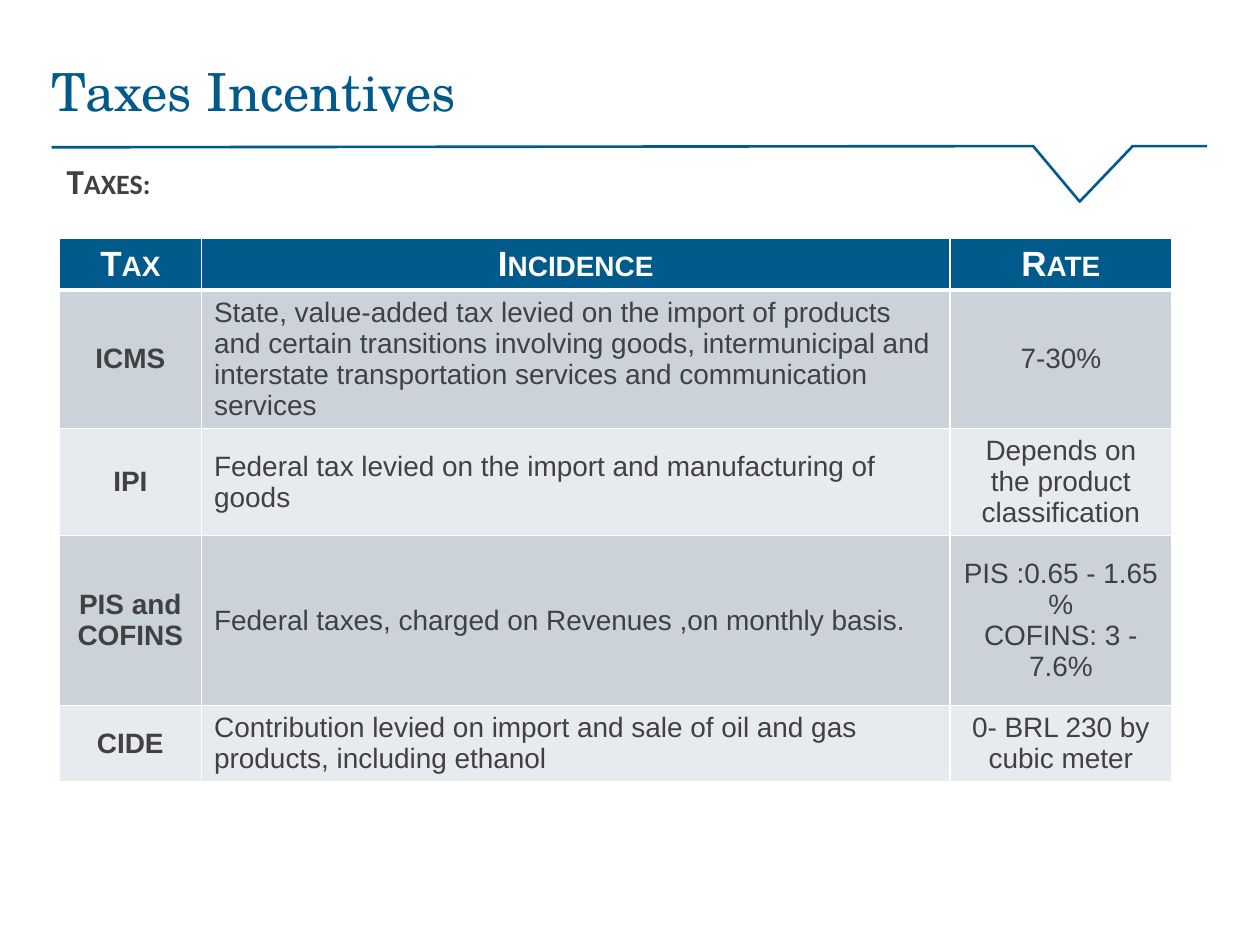
import pptx
import pptx.dml.color
import pptx.enum.text
import pptx.oxml
import pptx.oxml.ns
import pptx.util

Pt = pptx.util.Pt
ALIGN = pptx.enum.text.PP_ALIGN
ANCHOR = pptx.enum.text.MSO_ANCHOR

COLORS = {
    "blue": "005A8C",
    "text": "414042",
    "white": "FFFFFF",
    "band_dark": "CCD2DA",
    "band_light": "E7EAEE",
}

COL_WIDTHS = [81.4, 427.7, 126.7]
ROW_HEIGHTS = [27.4, 79.2, 61.2, 97.2, 43.2]
ROWS = [
    ["Tax", "Incidence", "Rate"],
    ["ICMS",
     "State, value-added tax levied on the import of products and certain "
     "transitions involving goods, intermunicipal and interstate "
     "transportation services and communication services",
     "7-30%"],
    ["IPI",
     "Federal tax levied on the import and manufacturing of goods",
     "Depends on the product classification"],
    ["PIS and COFINS",
     "Federal taxes, charged on Revenues ,on monthly basis.",
     "PIS :0.65 - 1.65 %\nCOFINS: 3 - 7.6%"],
    ["CIDE",
     "Contribution levied on import and sale of oil and gas products, "
     "including ethanol",
     "0- BRL 230 by cubic meter"],
]


def rgb(name):
    return pptx.dml.color.RGBColor.from_string(COLORS[name])


def add_run(p, text, size, font, color, bold=False, small_caps=False):
    r = p.add_run()
    r.text = text
    r.font.size = Pt(size)
    r.font.name = font
    r.font.bold = bold
    r.font.color.rgb = rgb(color)
    if small_caps:
        r._r.get_or_add_rPr().set("cap", "small")


def set_borders(cell, top, bottom):
    tc_pr = cell._tc.get_or_add_tcPr()
    for side, width in (("L", 1), ("R", 1), ("T", top), ("B", bottom)):
        tc_pr.append(pptx.oxml.parse_xml(
            f'<a:ln{side} {pptx.oxml.ns.nsdecls("a")} w="{Pt(width)}">'
            f'<a:solidFill><a:srgbClr val="{COLORS["white"]}"/></a:solidFill>'
            f'</a:ln{side}>'))


def add_title(slide, text):
    sp = slide.shapes.title
    sp.left, sp.top, sp.width, sp.height = Pt(29.5), Pt(33.8), Pt(629.3), Pt(63.4)
    tf = sp.text_frame
    tf.margin_left = tf.margin_top = tf.margin_right = tf.margin_bottom = 0
    tf.vertical_anchor = ANCHOR.TOP
    tf.auto_size = pptx.enum.text.MSO_AUTO_SIZE.NONE
    p = tf.paragraphs[0]
    p.alignment = ALIGN.LEFT
    add_run(p, text, 30, "TeX Gyre Schola", "blue")


def add_notched_rule(slide):
    points = [(689.8, 83.5), (647.3, 83.5), (617, 115.2), (590.4, 83.5), (29.5, 84.2)]
    (x, y), *rest = [(Pt(px), Pt(py)) for px, py in points]
    builder = slide.shapes.build_freeform(x, y)
    builder.add_line_segments(rest, close=False)
    sp = builder.convert_to_shape()
    sp.shadow.inherit = False
    sp.fill.solid()
    sp.fill.fore_color.rgb = rgb("white")
    sp.line.color.rgb = rgb("blue")
    sp.line.width = Pt(1.5)


def add_label(slide, text):
    sp = slide.shapes.add_textbox(Pt(31), Pt(87.8), Pt(62.6), Pt(31.7))
    tf = sp.text_frame
    tf.word_wrap = False
    tf.auto_size = pptx.enum.text.MSO_AUTO_SIZE.SHAPE_TO_FIT_TEXT
    add_run(tf.paragraphs[0], text, 20, "Calibri", "text", True, True)


def fill_cell(cell, text, row, col):
    header = row == 0
    set_borders(cell, top=3 if row == 1 else 1, bottom=3 if header else 1)
    cell.fill.solid()
    band = "band_dark" if row % 2 else "band_light"
    cell.fill.fore_color.rgb = rgb("blue" if header else band)
    cell.vertical_anchor = ANCHOR.TOP if header else ANCHOR.MIDDLE
    tf = cell.text_frame
    for i, line in enumerate(text.split("\n")):
        p = tf.add_paragraph() if i else tf.paragraphs[0]
        p.alignment = ALIGN.LEFT if col == 1 and not header else ALIGN.CENTER
        if header:
            add_run(p, line, 20, "Arial", "white", True, True)
        else:
            add_run(p, line, 16, "Arial", "text", col == 0)


def add_tax_table(slide):
    frame = slide.shapes.add_table(
        len(ROWS), len(COL_WIDTHS), Pt(33.8), Pt(136.1),
        Pt(sum(COL_WIDTHS)), Pt(sum(ROW_HEIGHTS)))
    table = frame.table
    for column, width in zip(table.columns, COL_WIDTHS):
        column.width = Pt(width)
    for row, height in zip(table.rows, ROW_HEIGHTS):
        row.height = Pt(height)
    for i, texts in enumerate(ROWS):
        for j, text in enumerate(texts):
            fill_cell(table.cell(i, j), text, i, j)


def main():
    prs = pptx.Presentation()
    prs.slide_width, prs.slide_height = Pt(720), Pt(540)
    slide = prs.slides.add_slide(prs.slide_layouts[5])

    # Heading and its rule
    add_notched_rule(slide)
    add_title(slide, "Taxes Incentives")

    # Content
    add_tax_table(slide)
    add_label(slide, "Taxes:")

    prs.save("out.pptx")


if __name__ == "__main__":
    main()
